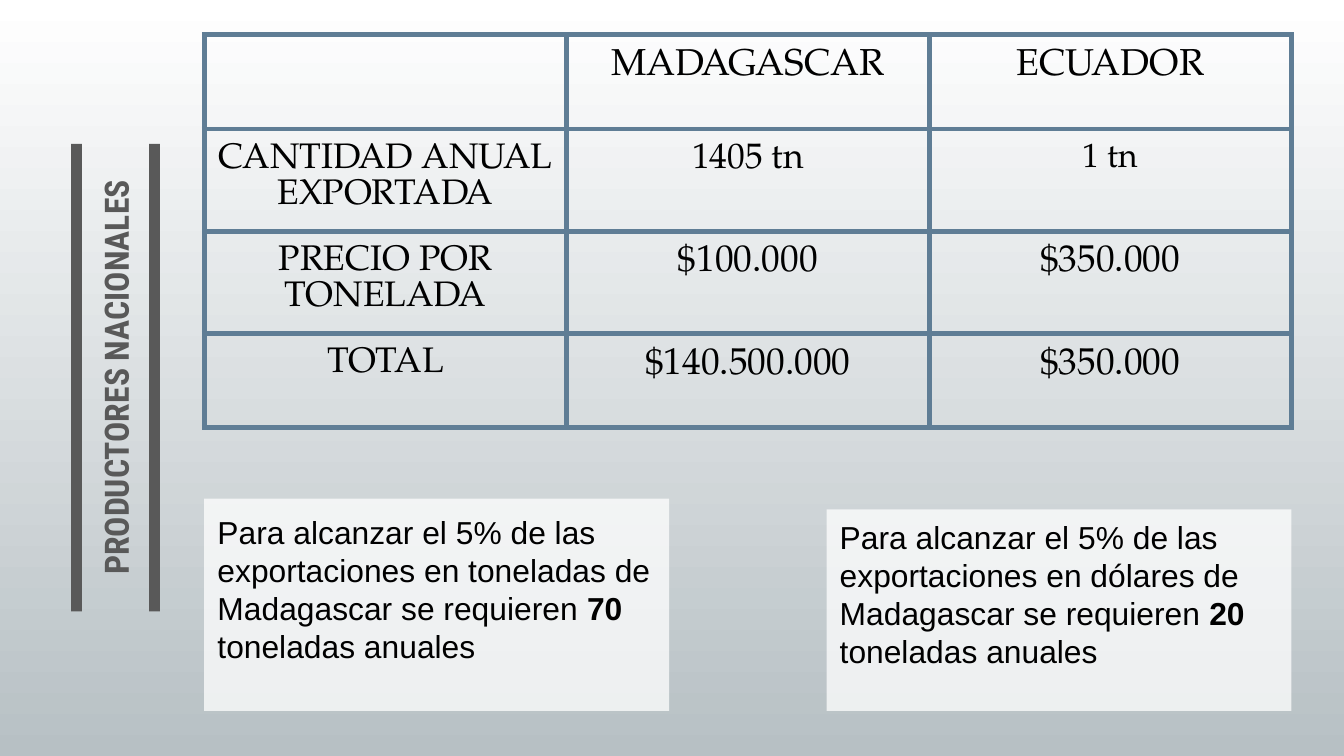
from lxml import etree
from pptx import Presentation
from pptx.dml.color import RGBColor
from pptx.enum.shapes import MSO_SHAPE
from pptx.enum.text import MSO_ANCHOR, MSO_AUTO_SIZE, PP_ALIGN
from pptx.oxml.ns import qn
from pptx.util import Inches, Pt

RECT = MSO_SHAPE.RECTANGLE
CENTER, LEFT = PP_ALIGN.CENTER, PP_ALIGN.LEFT
TOP, MIDDLE, BOTTOM = MSO_ANCHOR.TOP, MSO_ANCHOR.MIDDLE, MSO_ANCHOR.BOTTOM
NO_FIT = MSO_AUTO_SIZE.NONE

GRAY, BLUE, BLACK, WHITE = "595959", "5F7D95", "000000", "FFFFFF"
SERIF, SANS, HEADING = "TeX Gyre Pagella", "Arial", "Roboto Condensed"


def rgb(color):
    return RGBColor.from_string(color)


class SlideBuilder:
    """Holds the text styles and the current slide, and adds its elements."""

    def __init__(self, slide):
        self.slide = slide
        self.inset = Inches(0.1)

    def background(self, start, end):
        fill = self.slide.background.fill
        fill.gradient()
        fill.gradient_angle = 270
        for stop, color, position in zip(fill.gradient_stops, (start, end), (0, 1)):
            stop.color.rgb = rgb(color)
            stop.position = position

    def style(self, p, font, size, color, align):
        p.alignment = align
        for r in p.runs:
            r.font.name = font
            r.font.size = Pt(size)
            r.font.color.rgb = rgb(color)

    def margins(self, target):
        target.margin_left = target.margin_right = self.inset
        target.margin_top = target.margin_bottom = self.inset

    def title(self, text, x, y, w, h):
        sp = self.slide.shapes.title
        sp.left, sp.top, sp.width, sp.height = map(Inches, (x, y, w, h))
        sp.rotation = 270
        tf = sp.text_frame
        tf.text = text
        tf.auto_size = NO_FIT
        tf.vertical_anchor = BOTTOM
        self.margins(tf)
        p = tf.paragraphs[0]
        self.style(p, HEADING, 18, GRAY, CENTER)
        p.runs[0].font.bold = True

    def rect(self, x, y, w, h, color, rotation=0, alpha=100):
        sp = self.slide.shapes.add_shape(RECT, *map(Inches, (x, y, w, h)))
        sp.rotation = rotation
        sp.shadow.inherit = False
        sp.line.fill.background()
        sp.fill.solid()
        sp.fill.fore_color.rgb = rgb(color)
        if alpha < 100:
            clr = sp.fill._xPr.find(".//" + qn("a:srgbClr"))
            etree.SubElement(clr, qn("a:alpha"), val=str(alpha * 1000))
        return sp

    def note(self, x, y, w, h, before, number, after):
        tf = self.rect(x, y, w, h, WHITE, alpha=75).text_frame
        tf.word_wrap = True
        tf.vertical_anchor = MIDDLE
        self.margins(tf)
        tf.margin_bottom = Inches(0.34)
        p = tf.paragraphs[0]
        for text in (before, number, after):
            r = p.add_run()
            r.text = text
            r.font.bold = text == number
        self.style(p, SANS, 17, BLACK, LEFT)

    def border(self, cell, color, width):
        tc_pr = cell._tc.get_or_add_tcPr()
        for side in ("lnL", "lnR", "lnT", "lnB"):
            ln = etree.SubElement(tc_pr, qn("a:" + side), w=str(Pt(width)))
            fill = etree.SubElement(ln, qn("a:solidFill"))
            etree.SubElement(fill, qn("a:srgbClr"), val=color)

    def table(self, x, y, w, heights, rows):
        frame = self.slide.shapes.add_table(
            len(rows), len(rows[0]), *map(Inches, (x, y, w, sum(heights))))
        table = frame.table
        table.first_row = table.horz_banding = False
        for i, (height, row) in enumerate(zip(heights, rows)):
            table.rows[i].height = Inches(height)
            for j, (text, size) in enumerate(row):
                cell = table.cell(i, j)
                self.border(cell, BLUE, 3)
                cell.fill.background()
                cell.vertical_anchor = TOP
                self.margins(cell)
                p = cell.text_frame.paragraphs[0]
                p.text = text
                p.line_spacing = Pt(size + 0.3)
                self.style(p, SERIF, size, BLACK, CENTER)


def main():
    prs = Presentation()
    prs.slide_width = Inches(10)
    prs.slide_height = prs.slide_width * 9 // 16
    s = SlideBuilder(prs.slides.add_slide(prs.slide_layouts[5]))

    s.background(WHITE, "B7C0C4")
    s.title("PRODUCTORES NACIONALES", -2.31, 2.41, 6.04, 0.8)
    for x in (-1.17, -0.59):
        s.rect(x, 2.77, 3.48, 0.08, GRAY, rotation=270)

    s.table(1.52, 0.26, 8.09, (0.7, 0.76, 0.76, 0.7), [
        [("", 19), ("MADAGASCAR", 20), ("ECUADOR", 20)],
        [("CANTIDAD ANUAL EXPORTADA", 19), ("1405 tn", 19), ("1 tn", 18)],
        [("PRECIO POR TONELADA", 19), ("$100.000", 20), ("$350.000", 20)],
        [("TOTAL", 19), ("$140.500.000", 20), ("$350.000", 20)],
    ])

    for x, y, h, unit, number in ((1.52, 3.71, 1.58, "toneladas", "70"),
                                  (6.15, 3.79, 1.5, "dólares", "20")):
        s.note(x, y, 3.46, h,
               f"Para alcanzar el 5% de las exportaciones en {unit} "
               "de Madagascar se requieren ", number, " toneladas anuales")

    prs.save("out.pptx")


if __name__ == "__main__":
    main()
